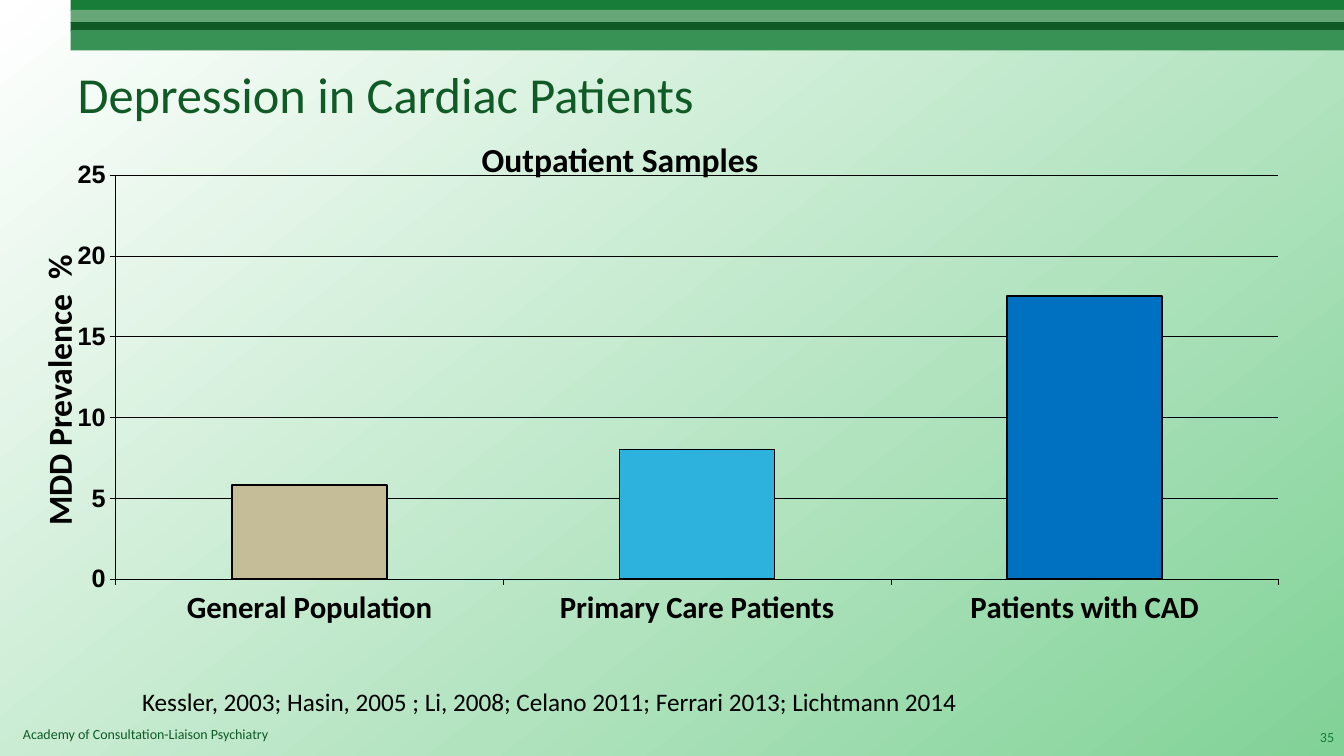
from dataclasses import dataclass
from lxml import etree
from pptx import Presentation
from pptx.chart.data import CategoryChartData as ChartData
from pptx.dml.color import RGBColor as Rgb
from pptx.enum.chart import XL_CHART_TYPE as Kind
from pptx.enum.chart import XL_TICK_LABEL_POSITION as Label
from pptx.enum.chart import XL_TICK_MARK as Tick
from pptx.enum.shapes import MSO_SHAPE as Shape
from pptx.enum.text import MSO_ANCHOR as Anchor
from pptx.enum.text import PP_ALIGN as Align
from pptx.oxml.ns import qn
from pptx.util import Cm, Pt


@dataclass(frozen=True)
class Theme:
    face: str = "Calibri"
    digits: str = "Arial"
    base: str = "Times New Roman"
    ink: str = "000000"
    dark: str = "105A25"
    green: str = "177D38"
    white: str = "FFFFFF"
    mint: str = "81D297"
    title: int = 36
    head: int = 24
    group: int = 22
    body: int = 18
    small: int = 10


@dataclass(frozen=True)
class Band:
    top: float
    height: float
    color: str


@dataclass(frozen=True)
class Note:
    text: str
    left: float
    top: float
    width: float
    height: float
    size: int
    color: str
    bold: bool = False
    wrap: bool = True
    align: Align = Align.LEFT
    anchor: Anchor = Anchor.TOP
    turn: bool = False


@dataclass(frozen=True)
class Bar:
    name: str
    value: float
    color: str


T = Theme()
BANDS = [
    Band(0, 0.28, T.green),
    Band(0.25, 0.33, "66A677"),
    Band(0.56, 0.23, T.dark),
    Band(0.76, 0.51, "389155"),
]
TITLE = Note("Depression in Cardiac Patients", 1.7, 0.76, 30.48, 3.18,
             T.title, T.dark, anchor=Anchor.MIDDLE)
NOTES = [
    Note("Academy of Consultation-Liaison Psychiatry", 0.33, 18.16, 23.5, 0.69,
         T.small, T.dark),
    Note("Outpatient Samples", 11.89, 3.38, 7.57, 1.27,
         T.head, T.ink, bold=True, wrap=False),
    Note("MDD Prevalence  %", 0.84, 4.88, 1.55, 9.91,
         T.head, T.ink, bold=True, align=Align.CENTER, turn=True),
    Note("Kessler, 2003; Hasin, 2005 ; Li, 2008; Celano 2011; Ferrari 2013; "
         "Lichtmann 2014", 3.33, 17.17, 21.31, 1.02, T.body, T.ink, wrap=False),
    Note("35", 32.87, 18.06, 1, 1.02, T.small, T.green,
         align=Align.RIGHT, anchor=Anchor.MIDDLE),
]
BARS = [
    Bar("General Population", 5.8, "C4BD97"),
    Bar("Primary Care Patients", 8, "2CB2DC"),
    Bar("Patients with CAD", 17.5, "0070C0"),
]
PLOT = {"x": 0.06, "y": 0.03, "w": 0.89, "h": 0.76}


def style(font, face: str, size: int, color: str, bold: bool) -> None:
    font.name, font.size, font.bold = face, Pt(size), bold
    font.color.rgb = Rgb.from_string(color)


def stroke(line, width: float) -> None:
    line.color.rgb = Rgb.from_string(T.ink)
    line.width = Pt(width)


def paint(fill, color: str) -> None:
    fill.solid()
    fill.fore_color.rgb = Rgb.from_string(color)


def draw_back(slide) -> None:
    fill = slide.background.fill
    fill.gradient()
    fill.gradient_angle = 308
    for stop, color in zip(fill.gradient_stops, (T.white, T.mint)):
        stop.color.rgb = Rgb.from_string(color)


def draw_band(slide, band: Band) -> None:
    box = slide.shapes.add_shape(Shape.RECTANGLE, Cm(1.78), Cm(band.top),
                                 Cm(32.09), Cm(band.height))
    box.shadow.inherit = False
    paint(box.fill, band.color)
    box.line.fill.background()


def fill_text(box, note: Note) -> None:
    box.left, box.top = Cm(note.left), Cm(note.top)
    box.width, box.height = Cm(note.width), Cm(note.height)
    frame = box.text_frame
    frame.text = note.text
    frame.word_wrap = note.wrap
    frame.vertical_anchor = note.anchor
    if note.turn:
        frame._txBody.bodyPr.set("vert", "vert270")
    para = frame.paragraphs[0]
    para.alignment = note.align
    style(para.runs[0].font, T.face, note.size, note.color, note.bold)


def set_plot(chart) -> None:
    area = chart._chartSpace.chart.plotArea
    for old in area.findall(qn("c:layout")):
        area.remove(old)
    layout = etree.Element(qn("c:layout"))
    manual = etree.SubElement(layout, qn("c:manualLayout"))
    modes = {"layoutTarget": "inner", "xMode": "edge", "yMode": "edge"}
    for key, val in (modes | PLOT).items():
        etree.SubElement(manual, qn(f"c:{key}")).set("val", str(val))
    area.insert(0, layout)


def draw_chart(slide) -> None:
    data = ChartData()
    data.categories = [bar.name for bar in BARS]
    data.add_series("Series 1", [bar.value for bar in BARS])
    chart = slide.shapes.add_chart(Kind.COLUMN_CLUSTERED, Cm(0.94), Cm(4.01),
                                   Cm(32.92), Cm(13.39), data).chart
    chart.has_title = chart.has_legend = False
    style(chart.font, T.base, T.body, T.ink, True)
    set_plot(chart)

    # Axes
    cat, val = chart.category_axis, chart.value_axis
    for axis, face, size in ((cat, T.face, T.group), (val, T.digits, T.body)):
        axis.major_tick_mark = Tick.OUTSIDE
        axis.minor_tick_mark = Tick.NONE
        style(axis.tick_labels.font, face, size, T.ink, True)
        stroke(axis.format.line, 0.25)
    cat.tick_label_position = Label.LOW
    val.minimum_scale, val.maximum_scale, val.major_unit = 0, 25, 5
    stroke(val.major_gridlines.format.line, 0.25)

    # Columns
    plot = chart.plots[0]
    plot.gap_width = 150
    plot.vary_by_categories = False
    series = plot.series[0]
    paint(series.format.fill, "CCCC33")
    stroke(series.format.line, 1)
    for i, bar in enumerate(BARS):
        form = series.points[i].format
        paint(form.fill, bar.color)
        stroke(form.line, 1)


def main() -> None:
    deck = Presentation()
    deck.slide_width, deck.slide_height = Cm(33.87), Cm(19.05)
    slide = deck.slides.add_slide(deck.slide_layouts[5])

    # Backdrop
    draw_back(slide)
    for band in BANDS:
        draw_band(slide, band)

    # Chart and text
    draw_chart(slide)
    fill_text(slide.shapes.title, TITLE)
    for note in NOTES:
        fill_text(slide.shapes.add_textbox(0, 0, 0, 0), note)
    deck.save("out.pptx")


if __name__ == "__main__":
    main()
